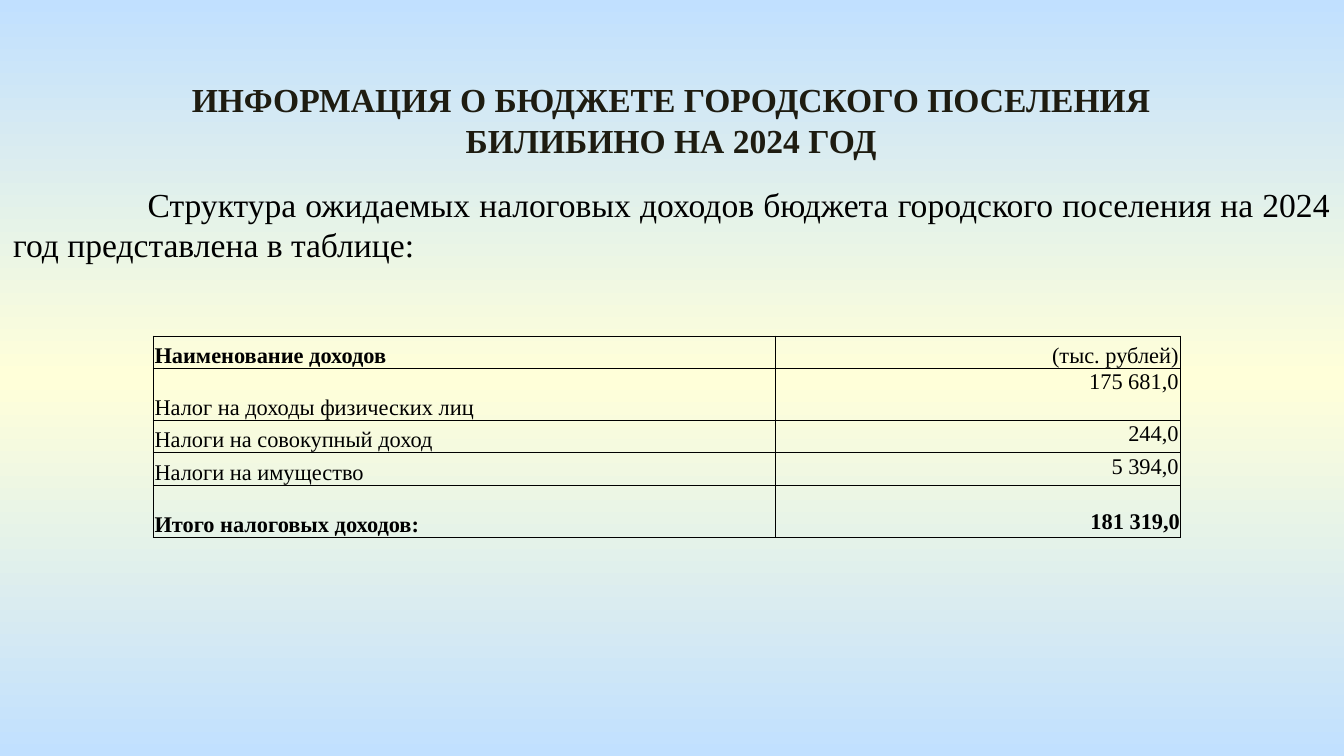
from pptx import Presentation
from pptx.dml.color import RGBColor
from pptx.enum.text import MSO_ANCHOR, PP_ALIGN
from pptx.oxml import parse_xml
from pptx.oxml.ns import nsdecls
from pptx.util import Inches, Pt

TOP, BOTTOM = MSO_ANCHOR.TOP, MSO_ANCHOR.BOTTOM
CENTER, RIGHT, JUSTIFY = PP_ALIGN.CENTER, PP_ALIGN.RIGHT, PP_ALIGN.JUSTIFY
FONT = "Times New Roman"
BLACK = "000000"
BLUE, CREAM = "C1E0FF", "FFFFD9"
WIDTH = 10
HEIGHT = WIDTH * 9 / 16

TITLE = "ИНФОРМАЦИЯ О БЮДЖЕТЕ ГОРОДСКОГО ПОСЕЛЕНИЯ БИЛИБИНО НА 2024 ГОД"
INTRO = ("Структура ожидаемых налоговых доходов бюджета городского поселения "
         "на 2024 год представлена в таблице:")
ROWS = [
    ("Наименование доходов", "(тыс. рублей)", 0.24),
    ("Налог на доходы физических лиц", "175 681,0", 0.39),
    ("Налоги на совокупный доход", "244,0", 0.24),
    ("Налоги на имущество", "5 394,0", 0.24),
    ("Итого налоговых доходов:", "181 319,0", 0.39),
]
NAMES = 4.63


def color(code):
    return RGBColor.from_string(code)


def write(frame, text, size, align, bold=False, tint=BLACK):
    frame.text = text
    line = frame.paragraphs[0]
    line.alignment = align
    for run in line.runs:
        font = run.font
        font.name, font.size, font.bold = FONT, Pt(size), bold
        font.color.rgb = color(tint)
    return line


def add_back(slide):
    fill = slide.background.fill
    fill.gradient()
    fill.gradient_angle = 90
    for place, stop in enumerate(fill.gradient_stops):
        stop.color.rgb = color(BLUE)
        stop.position = place
    stops = slide.background.fill._fill._gradFill.gsLst
    stops.insert(1, parse_xml(
        f'<a:gs {nsdecls("a")} pos="50000"><a:srgbClr val="{CREAM}"/></a:gs>'))


def add_text(slide, box, text, align, bold=False, tint=BLACK, indent=0):
    frame = slide.shapes.add_textbox(*map(Inches, box)).text_frame
    frame.word_wrap = True
    line = write(frame, text, 18, align, bold, tint)
    if indent:
        props = line._p.get_or_add_pPr()
        props.set("marL", "0")
        props.set("indent", str(Inches(indent)))


def add_edges(cell):
    props = cell._tc.get_or_add_tcPr()
    for side in ("lnL", "lnR", "lnT", "lnB"):
        props.append(parse_xml(
            f'<a:{side} {nsdecls("a")} w="{Pt(0.5)}"><a:solidFill>'
            f'<a:srgbClr val="{BLACK}"/></a:solidFill></a:{side}>'))


def add_grid(slide, box):
    table = slide.shapes.add_table(len(ROWS), 2, *map(Inches, box)).table
    table.first_row = table.horz_banding = False
    for column, width in zip(table.columns, (NAMES, box[2] - NAMES)):
        column.width = Inches(width)
    last = len(ROWS) - 1
    for i, (name, value, height) in enumerate(ROWS):
        table.rows[i].height = Inches(height)
        for j, text in enumerate((name, value)):
            cell = table.cell(i, j)
            add_edges(cell)
            cell.fill.background()
            cell.margin_left = cell.margin_right = cell.margin_top = Inches(0.01)
            cell.margin_bottom = 0
            cell.vertical_anchor = BOTTOM if j == 0 or i == 0 else TOP
            bold = i == last or (i == 0 and j == 0)
            write(cell.text_frame, text, 12, RIGHT if j else JUSTIFY, bold)
    total = table.cell(last, 1)
    total.margin_top = Inches(0.18)
    total.margin_left = total.margin_right = 0


def main():
    deck = Presentation()
    deck.slide_width, deck.slide_height = Inches(WIDTH), Inches(HEIGHT)
    slide = deck.slides.add_slide(deck.slide_layouts[6])
    add_back(slide)
    add_text(slide, (1.13, 0.54, 7.73, 0.71), TITLE, CENTER, True, "1E1C11")
    add_text(slide, (0, 1.32, WIDTH, 0.71), INTRO, JUSTIFY, indent=1)
    add_grid(slide, (1.14, 2.5, 7.64, 1.5))
    deck.save("out.pptx")


if __name__ == "__main__":
    main()
